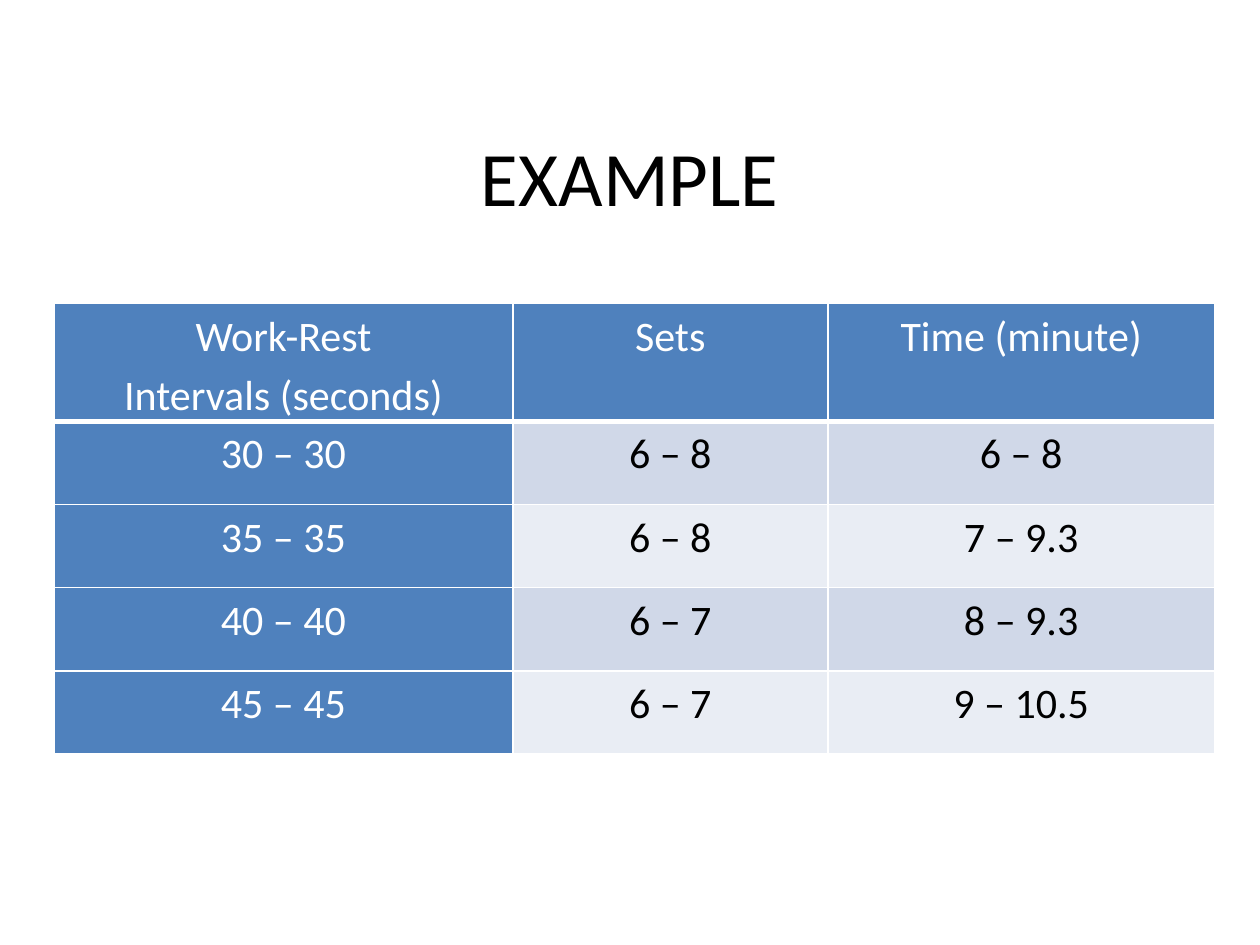
from pptx import Presentation
from pptx.dml.color import RGBColor
from pptx.enum import text
from pptx.oxml import parse_xml
from pptx.oxml.ns import nsdecls
from pptx.util import Inches, Pt

BLACK = RGBColor(0x00, 0x00, 0x00)
WHITE = RGBColor(0xFF, 0xFF, 0xFF)
BLUE = RGBColor(0x4F, 0x81, 0xBD)
BANDS = (RGBColor(0xD0, 0xD8, 0xE8), RGBColor(0xE9, 0xED, 0xF4))
FONT = "Calibri"

COLUMN_WIDTHS = (3.64, 2.5, 3.07)
ROW_HEIGHT = 0.66
ROWS = (
    ("Work-Rest Intervals\u00a0(seconds)", "Sets", "Time (minute)"),
    ("30 – 30", "6 – 8", "6 – 8"),
    ("35 – 35", "6 – 8", "7 – 9.3"),
    ("40 – 40", "6 – 7", "8 – 9.3"),
    ("45 – 45", "6 – 7", "9 – 10.5"),
)


def format_paragraph(paragraph, size, color):
    paragraph.alignment = text.PP_ALIGN.CENTER
    paragraph.font.name = FONT
    paragraph.font.size = Pt(size)
    paragraph.font.bold = False
    paragraph.font.color.rgb = color


def add_title(slide, words):
    title = slide.shapes.title
    title.left, title.top = Inches(0.5), Inches(0.77)
    title.width, title.height = Inches(9), Inches(1.25)
    title.text_frame.text = words
    title.text_frame.vertical_anchor = text.MSO_ANCHOR.MIDDLE
    format_paragraph(title.text_frame.paragraphs[0], 44, BLACK)


def add_borders(cell, bottom_width):
    """Draw white cell borders; must run before the cell's fill is set."""
    properties = cell._tc.get_or_add_tcPr()
    for side, width in (("L", 1), ("R", 1), ("T", 1), ("B", bottom_width)):
        properties.append(parse_xml(
            f'<a:ln{side} {nsdecls("a")} w="{Pt(width)}"><a:solidFill>'
            f'<a:srgbClr val="{WHITE}"/></a:solidFill></a:ln{side}>'))


def format_cell(cell, words, fill, color, bottom_width):
    cell.margin_left = cell.margin_right = Inches(0.07)
    cell.margin_top = cell.margin_bottom = 0
    add_borders(cell, bottom_width)
    cell.fill.solid()
    cell.fill.fore_color.rgb = fill
    cell.text = words
    paragraph = cell.text_frame.paragraphs[0]
    paragraph.line_spacing = 1.15
    format_paragraph(paragraph, 24, color)


def add_interval_table(slide):
    table = slide.shapes.add_table(
        len(ROWS), len(COLUMN_WIDTHS), Inches(0.43), Inches(2.41),
        Inches(sum(COLUMN_WIDTHS)), Inches(ROW_HEIGHT * len(ROWS))).table
    table.first_col = True
    for column, width in zip(table.columns, COLUMN_WIDTHS):
        column.width = Inches(width)
    for row_index, row in enumerate(ROWS):
        table.rows[row_index].height = Inches(ROW_HEIGHT)
        for column_index, words in enumerate(row):
            is_heading = row_index == 0 or column_index == 0
            format_cell(
                table.cell(row_index, column_index), words,
                fill=BLUE if is_heading else BANDS[(row_index - 1) % 2],
                color=WHITE if is_heading else BLACK,
                bottom_width=3 if row_index == 0 else 1)


def main():
    presentation = Presentation()
    presentation.slide_width = Inches(10)
    presentation.slide_height = Inches(7.5)
    slide = presentation.slides.add_slide(presentation.slide_layouts[5])
    add_title(slide, "EXAMPLE")
    add_interval_table(slide)
    presentation.save("out.pptx")


if __name__ == "__main__":
    main()
